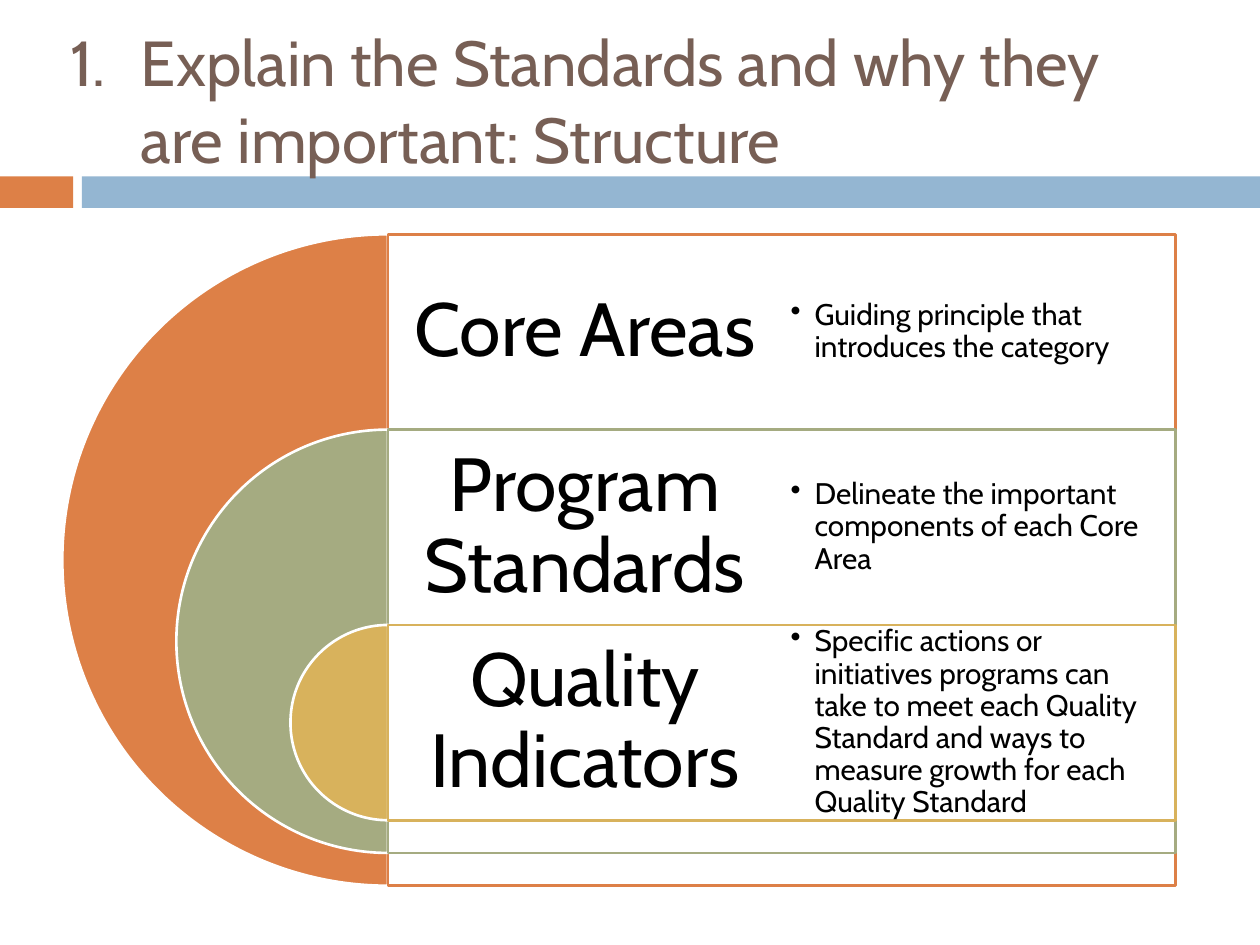
from dataclasses import dataclass

from lxml import etree
from pptx import Presentation
from pptx.dml.color import RGBColor
from pptx.enum.shapes import MSO_SHAPE
from pptx.enum.text import MSO_ANCHOR, PP_ALIGN
from pptx.oxml.ns import qn
from pptx.util import Inches, Pt

RECT, PIE = MSO_SHAPE.RECTANGLE, MSO_SHAPE.PIE
MIDDLE = MSO_ANCHOR.MIDDLE
LEFT, CENTER = PP_ALIGN.LEFT, PP_ALIGN.CENTER


@dataclass(frozen=True)
class Theme:
    font: str = "Cabin"
    white: str = "FFFFFF"
    text: str = "000000"
    title: str = "775F55"
    orange: str = "DD8047"
    blue: str = "94B6D2"
    green: str = "A5AB81"
    gold: str = "D8B25C"
    title_size: float = 36.3
    name_size: float = 43
    detail_size: float = 17
    line: float = 1.5


THEME = Theme()

LEVELS = [
    (THEME.orange, "Core Areas", "Guiding principle that introduces the category"),
    (THEME.green, "Program Standards",
     "Delineate the important components of each Core Area"),
    (THEME.gold, "Quality Indicators",
     "Specific actions or initiatives programs can take to meet each Quality "
     "Standard and ways to measure growth for each Quality Standard"),
]

CENTER_X, TOP, ROW = 3.08, 1.86, 1.55
DIAMETER, SHRINK = 5.17, 1.81
PANEL_W = 6.25
COLUMN_W = PANEL_W / 2


def add_shape(slide, kind, x, y, w, h, fill, line=None, opacity=None):
    sp = slide.shapes.add_shape(kind, Inches(x), Inches(y), Inches(w), Inches(h))
    sp.shadow.inherit = False
    sp.fill.solid()
    sp.fill.fore_color.rgb = RGBColor.from_string(fill)
    if opacity is not None:
        color = sp.fill._xPr.find(qn("a:solidFill"))[0]
        etree.SubElement(color, qn("a:alpha"), val=str(opacity * 1000))
    if line:
        sp.line.color.rgb = RGBColor.from_string(line)
        sp.line.width = Pt(THEME.line)
    else:
        sp.line.fill.background()
    return sp


def set_bullet(p, indent, tag, **attrs):
    pPr = p._p.get_or_add_pPr()
    pPr.set("marL", str(Inches(indent)))
    pPr.set("indent", str(-Inches(indent)))
    etree.SubElement(pPr, qn(tag), **attrs)


def add_text(slide, text, x, y, w, h, size, color=THEME.text, align=LEFT,
             inset_x=0.1, inset_y=0.05, spacing=1.0):
    sp = slide.shapes.add_textbox(Inches(x), Inches(y), Inches(w), Inches(h))
    tf = sp.text_frame
    tf.word_wrap = True
    tf.vertical_anchor = MIDDLE
    tf.margin_left = tf.margin_right = Inches(inset_x)
    tf.margin_top = tf.margin_bottom = Inches(inset_y)
    p = tf.paragraphs[0]
    p.alignment = align
    p.line_spacing = spacing
    r = p.add_run()
    r.text = text
    r.font.name = THEME.font
    r.font.size = Pt(size)
    r.font.color.rgb = RGBColor.from_string(color)
    return p


def add_level(slide, i, color, name):
    y = TOP + i * ROW
    d = DIAMETER - i * SHRINK
    pie = add_shape(slide, PIE, CENTER_X - d / 2, y, d, d, color, THEME.white)
    pie.adjustments[0] = 54
    pie.adjustments[1] = 162
    add_shape(slide, RECT, CENTER_X, y, PANEL_W, d, THEME.white, color, opacity=90)
    add_text(slide, name, CENTER_X, y, COLUMN_W, ROW, THEME.name_size,
             align=CENTER, inset_x=0.18, inset_y=0.18, spacing=0.9)


def add_detail(slide, i, detail):
    p = add_text(slide, detail, CENTER_X + COLUMN_W, TOP + i * ROW, COLUMN_W, ROW,
                 THEME.detail_size, inset_x=0.07, inset_y=0.07, spacing=0.9)
    set_bullet(p, 0.19, "a:buChar", char="•")


def add_header(slide):
    add_shape(slide, RECT, 0, 1.4, 0.58, 0.25, THEME.orange)
    add_shape(slide, RECT, 0.65, 1.4, 9.35, 0.25, THEME.blue)


def add_title(slide):
    p = add_text(slide, "Explain the Standards and why they are important: Structure",
                 0.46, 0.25, 8.92, 1.08, THEME.title_size, THEME.title)
    set_bullet(p, 0.56, "a:buAutoNum", type="arabicPeriod")


def main():
    prs = Presentation()
    prs.slide_width, prs.slide_height = Inches(10), Inches(7.5)
    slide = prs.slides.add_slide(prs.slide_layouts[6])
    add_header(slide)
    for i, (color, name, _) in enumerate(LEVELS):
        add_level(slide, i, color, name)
    for i, (_, _, detail) in enumerate(LEVELS):
        add_detail(slide, i, detail)
    add_title(slide)
    prs.save("out.pptx")


if __name__ == "__main__":
    main()
